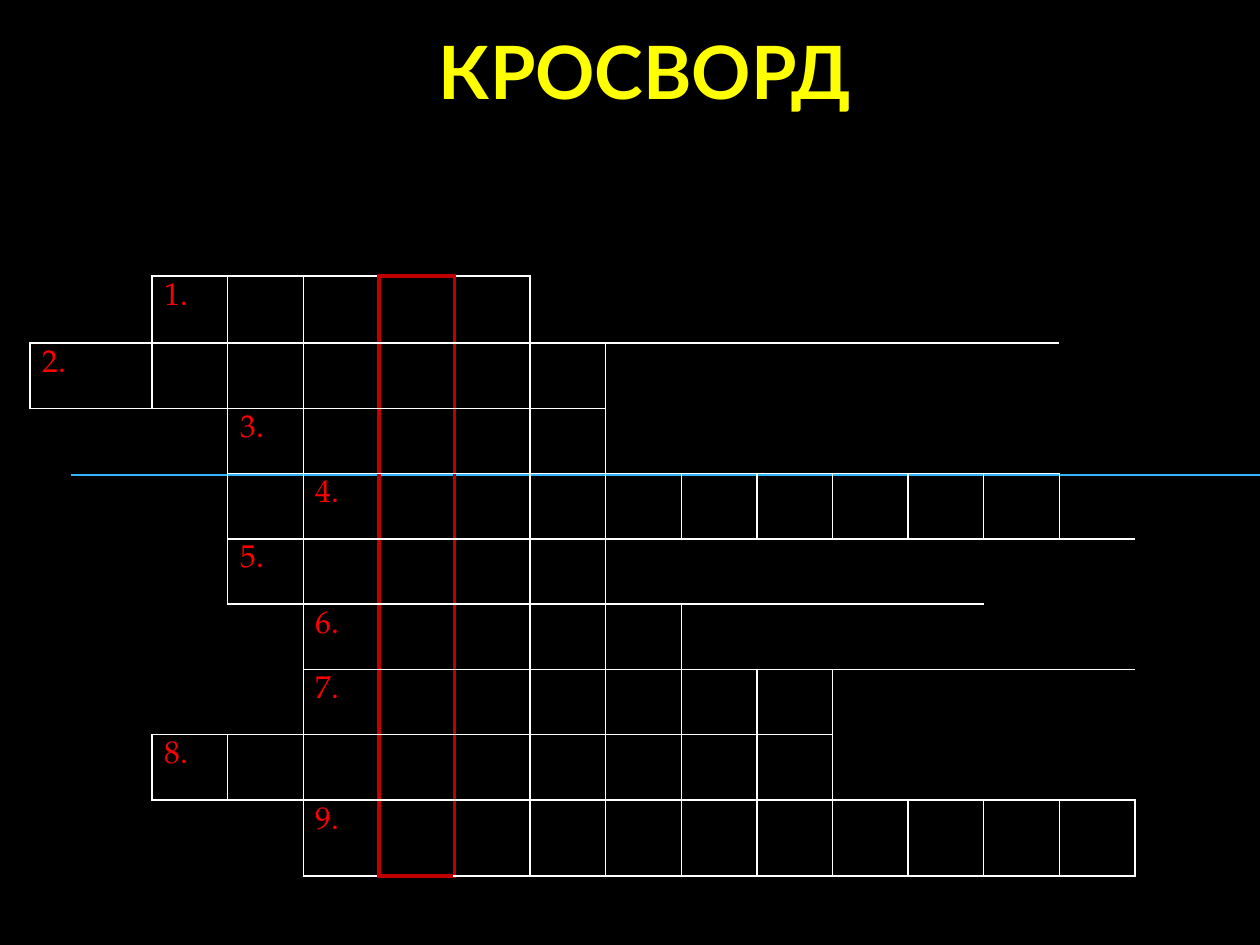
import dataclasses

import pptx
import pptx.dml.color
import pptx.enum.shapes
import pptx.enum.text
import pptx.oxml
import pptx.oxml.ns
import pptx.util

PX = 914400 // 126


@dataclasses.dataclass(frozen=True)
class Theme:
    background: str = "000000"
    title: str = "FFFF00"
    number: str = "FF0000"
    grid: str = "FFFFFF"
    keyword: str = "C00000"
    rule: str = "31B6FD"
    title_font: str = "Lato"
    number_font: str = "TeX Gyre Pagella"
    title_size: int = 42
    number_size: int = 18
    grid_width: float = 1
    keyword_width: float = 2.25
    rule_width: float = 0.75


THEME = Theme()
ROWS, COLUMNS = 9, 15
KEYWORD_COLUMN = 5
# First and last column of each answer, top to bottom
ANSWERS = [(2, 6), (1, 7), (3, 7), (4, 13), (3, 7), (4, 8), (4, 10), (2, 10), (4, 14)]
# Row, column, row span, column span, visible edges
BLANKS = [
    (0, 0, 9, 1, ""), (0, 1, 1, 1, "RB"), (0, 7, 1, 7, "LB"), (0, 14, 4, 1, ""),
    (1, 8, 2, 6, "LB"), (2, 1, 2, 2, "TR"), (3, 3, 1, 1, "TRB"),
    (4, 1, 1, 2, "R"), (4, 8, 1, 5, "LTB"), (4, 13, 2, 2, "T"),
    (5, 1, 4, 1, ""), (5, 2, 2, 2, "RB"), (5, 9, 1, 4, "LB"),
    (6, 11, 1, 4, "L"), (7, 11, 1, 4, "LB"), (8, 2, 1, 2, "TR"),
]


def px(length):
    return pptx.util.Emu(length * PX)


def rgb(value):
    return pptx.dml.color.RGBColor.from_string(value)


def style_run(run, font, size, color, bold=False):
    run.font.name = font
    run.font.size = pptx.util.Pt(size)
    run.font.color.rgb = rgb(color)
    run.font.bold = bold


def add_title(slide, text):
    title = slide.shapes.add_textbox(px(78), px(20), px(1134), px(168))
    frame = title.text_frame
    frame.word_wrap = True
    frame.text = text
    heading = frame.paragraphs[0]
    heading.alignment = pptx.enum.text.PP_ALIGN.CENTER
    style_run(heading.runs[0], THEME.title_font, THEME.title_size, THEME.title, True)


def add_rule(slide):
    rule = slide.shapes.add_connector(
        pptx.enum.shapes.MSO_CONNECTOR.STRAIGHT, px(71), px(475), px(1260), px(475))
    rule.line.color.rgb = rgb(THEME.rule)
    rule.line.width = pptx.util.Pt(THEME.rule_width)
    properties = rule.element.find(pptx.oxml.ns.qn("p:spPr"))
    properties.append(pptx.oxml.parse_xml(
        f'<a:effectLst {pptx.oxml.ns.nsdecls("a")}/>'))


def is_keyword_edge(row, column, side):
    if column == KEYWORD_COLUMN:
        return side in "LR" or (row, side) in [(0, "T"), (ROWS - 1, "B")]
    return (column - KEYWORD_COLUMN, side) in [(-1, "R"), (1, "L")]


def set_borders(cell, edges):
    """Draw the edges given as side: (colour, width) and hide the others."""
    cell.fill.background()
    properties = cell._tc.get_or_add_tcPr()
    for position, side in enumerate("LRTB"):
        color, width = edges.get(side, (None, 0))
        paint = (f'<a:solidFill><a:srgbClr val="{color}"/></a:solidFill>'
                 if color else "<a:noFill/>")
        properties.insert(position, pptx.oxml.parse_xml(
            f'<a:ln{side} {pptx.oxml.ns.nsdecls("a")} w="{pptx.util.Pt(width)}">'
            f"{paint}</a:ln{side}>"))


def add_answer(table, row, first, last):
    for column in range(first, last + 1):
        edges = {
            side: (THEME.keyword, THEME.keyword_width)
            if is_keyword_edge(row, column, side)
            else (THEME.grid, THEME.grid_width)
            for side in "LRTB"
        }
        set_borders(table.cell(row, column), edges)
    number = table.cell(row, first)
    number.text_frame.text = f"{row + 1}."
    style_run(number.text_frame.paragraphs[0].runs[0],
              THEME.number_font, THEME.number_size, THEME.number)


def add_blank(table, row, column, height, width, sides):
    edges = {side: (THEME.grid, THEME.grid_width) for side in sides}
    for r in range(row, row + height):
        for c in range(column, column + width):
            set_borders(table.cell(r, c), edges)
    if height * width > 1:
        table.cell(row, column).merge(
            table.cell(row + height - 1, column + width - 1))


def add_crossword(slide):
    table = slide.shapes.add_table(
        ROWS, COLUMNS, 0, px(276), px(1135), px(600)).table
    table.first_row = table.horz_banding = False

    letter_width = px(983) // 13
    for column, width in enumerate([px(30), px(122)] + [letter_width] * 13):
        table.columns[column].width = width
    answer_height = px(457) // 7
    for row, height in enumerate([px(67)] + [answer_height] * 7 + [px(76)]):
        table.rows[row].height = height

    for row, (first, last) in enumerate(ANSWERS):
        add_answer(table, row, first, last)
    for blank in BLANKS:
        add_blank(table, *blank)


def main():
    deck = pptx.Presentation()
    deck.slide_width, deck.slide_height = px(1260), px(945)
    slide = deck.slides.add_slide(deck.slide_layouts[6])
    slide.background.fill.solid()
    slide.background.fill.fore_color.rgb = rgb(THEME.background)
    add_rule(slide)
    add_title(slide, "КРОСВОРД")
    add_crossword(slide)
    deck.save("out.pptx")


if __name__ == "__main__":
    main()
